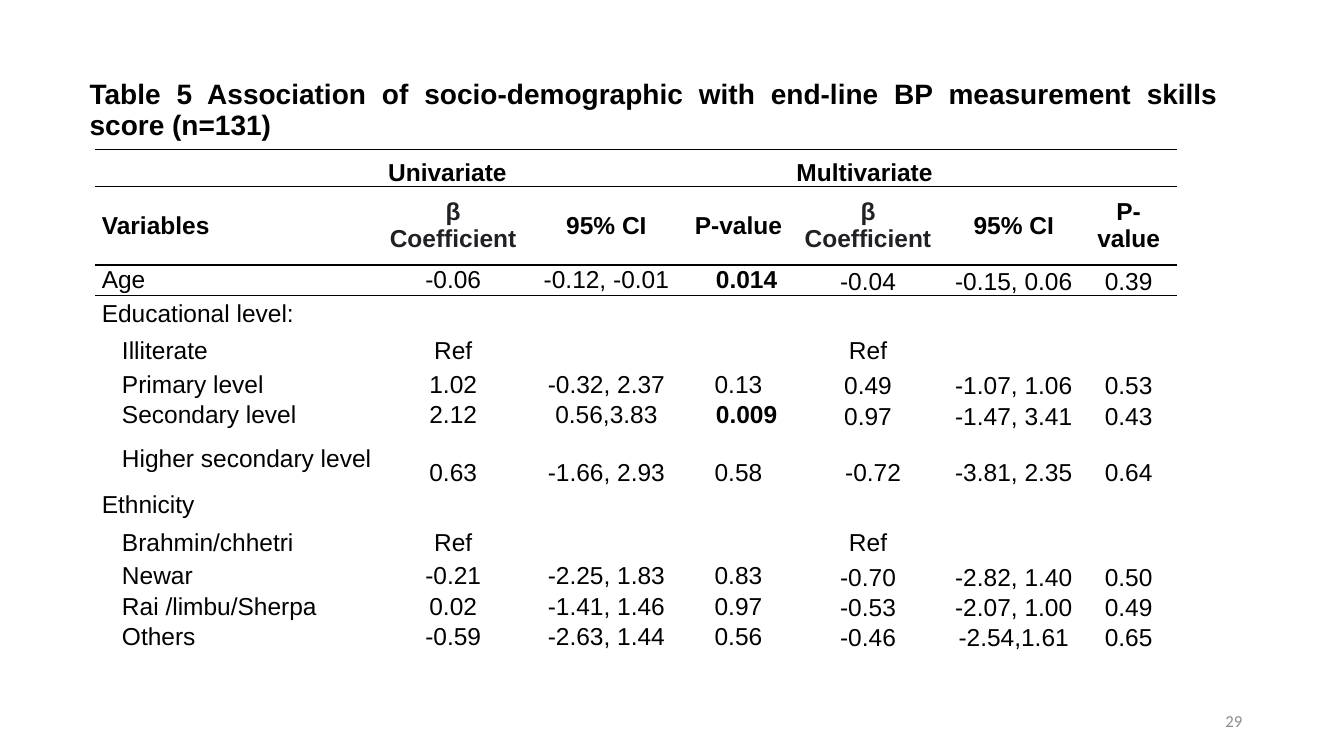
from pptx import Presentation
from pptx import util as u
from pptx.dml.color import RGBColor
from pptx.enum import text
from pptx.oxml import parse_xml
from pptx.oxml.ns import nsdecls

COLORS = {"black": "000000", "charcoal": "202124", "grey": "8C8C8C"}
NO_STYLE = "{2D5ABB26-0587-4C30-8999-92F81FD0307C}"
LEFT, CENTER = text.PP_ALIGN.LEFT, text.PP_ALIGN.CENTER
MIDDLE, BOTTOM = text.MSO_ANCHOR.MIDDLE, text.MSO_ANCHOR.BOTTOM

COL_WIDTHS = [2.84, 1.43, 1.61, 1.01, 1.56, 1.33, 0.95]
ROW_HEIGHTS = [0.37, 0.78, 0.3, 0.37, 0.37, 0.3, 0.3, 0.56, 0.37, 0.37, 0.3, 0.3, 0.3]
STATS = ["β Coefficient", "95% CI", "P-value"]
ROWS = [
    ["", "Univariate", "", "", "Multivariate", "", ""],
    ["Variables"] + STATS * 2,
    ["Age", "-0.06", "-0.12, -0.01", "0.014", "-0.04", "-0.15, 0.06", "0.39"],
    ["Educational level:"] + [""] * 6,
    ["Illiterate", "Ref", "", "", "Ref", "", ""],
    ["Primary level", "1.02", "-0.32, 2.37", "0.13", "0.49", "-1.07, 1.06", "0.53"],
    ["Secondary level", "2.12", "0.56,3.83", "0.009", "0.97", "-1.47, 3.41", "0.43"],
    ["Higher secondary level", "0.63", "-1.66, 2.93", "0.58", "-0.72", "-3.81, 2.35", "0.64"],
    ["Ethnicity"] + [""] * 6,
    ["Brahmin/chhetri", "Ref", "", "", "Ref", "", ""],
    ["Newar", "-0.21", "-2.25, 1.83", "0.83", "-0.70", "-2.82, 1.40", "0.50"],
    ["Rai /limbu/Sherpa", "0.02", "-1.41, 1.46", "0.97", "-0.53", "-2.07, 1.00", "0.49"],
    ["Others", "-0.59", "-2.63, 1.44", "0.56", "-0.46", "-2.54,1.61", "0.65"],
]
HEADER_ROWS = 2
TALL_ROW = 7
GROUP_LABELS = {"Variables", "Age", "Educational level:", "Ethnicity"}
SIGNIFICANT = {"0.014", "0.009"}
NUDGES = {"0.014": 0.16, "0.009": 0.16, "-0.72": 0.1}


def write(tf, content, size=17.5, font="Arial", color="black", bold=False,
          align=LEFT, spacing=None):
    """Put one formatted paragraph in a text frame."""
    tf.word_wrap = True
    p = tf.paragraphs[0]
    p.alignment = align
    if spacing:
        p.line_spacing = spacing
    p.font.size = u.Pt(size)
    if content:
        r = p.add_run()
        r.text = content
        r.font.size, r.font.name, r.font.bold = u.Pt(size), font, bold
        r.font.color.rgb = RGBColor.from_string(COLORS[color])


def add_text(s, box, content, bottom_inset=0.05, **fmt):
    """Add a vertically centred text box."""
    tf = s.shapes.add_textbox(*map(u.Inches, box)).text_frame
    tf.vertical_anchor = MIDDLE
    tf.margin_bottom = u.Inches(bottom_inset)
    write(tf, content, **fmt)


def add_rules(cell, *sides):
    """Draw black rules on the given sides of a cell."""
    tc_pr = cell._tc.get_or_add_tcPr()
    for i, side in enumerate(sides):
        tc_pr.insert(i, parse_xml(
            f'<a:{side} {nsdecls("a")} w="12700"><a:solidFill>'
            f'<a:srgbClr val="{COLORS["black"]}"/></a:solidFill></a:{side}>'))


def fill_cell(cell, row, col, value):
    """Set the text, margins, anchor and rules of one cell."""
    header = row < HEADER_ROWS
    indent = 0.2 if col == 0 and value not in GROUP_LABELS else NUDGES.get(value, 0)
    cell.margin_left = u.Inches(0.07 + indent)
    cell.margin_right = u.Inches(0.07 if col else 0)
    cell.margin_top = cell.margin_bottom = 0
    low = row == 0 or (not header and value != "Ref"
                       and (col >= 4 or (col and row == TALL_ROW)))
    cell.vertical_anchor = BOTTOM if low else MIDDLE
    cell.fill.background()
    write(cell.text_frame, value, bold=header or value in SIGNIFICANT,
          color="charcoal" if value == STATS[0] else "black",
          align=CENTER if col and row else LEFT)
    if header:
        add_rules(cell, "lnT", "lnB")
    elif row == HEADER_ROWS:
        add_rules(cell, "lnT")


def add_results_table(s, box):
    """Place the regression table in the given box."""
    table = s.shapes.add_table(len(ROWS), len(COL_WIDTHS), *map(u.Inches, box)).table
    table.first_row = table.horz_banding = False
    table._tbl.tblPr[0].text = NO_STYLE
    for column, width in zip(table.columns, COL_WIDTHS):
        column.width = u.Inches(width)
    for i, (values, height) in enumerate(zip(ROWS, ROW_HEIGHTS)):
        table.rows[i].height = u.Inches(height)
        for j, value in enumerate(values):
            fill_cell(table.cell(i, j), i, j, value)


def main():
    """Build and save the slide."""
    prs = Presentation()
    prs.slide_width, prs.slide_height = u.Inches(13.33), u.Inches(7.5)
    s = prs.slides.add_slide(prs.slide_layouts[6])
    add_text(s, (0.79, 1.03, 11.39, 0.44),
             "Table 5 Association of socio-demographic with end-line BP "
             "measurement skills score (n=131)",
             bottom_inset=0.35, size=20, bold=True,
             align=text.PP_ALIGN.JUSTIFY, spacing=0.9)
    add_results_table(s, (0.94, 1.48, sum(COL_WIDTHS), sum(ROW_HEIGHTS)))
    add_text(s, (9.42, 6.95, 3, 0.4), "29", size=12, font="Calibri",
             color="grey", align=text.PP_ALIGN.RIGHT)
    prs.save("out.pptx")


if __name__ == "__main__":
    main()
